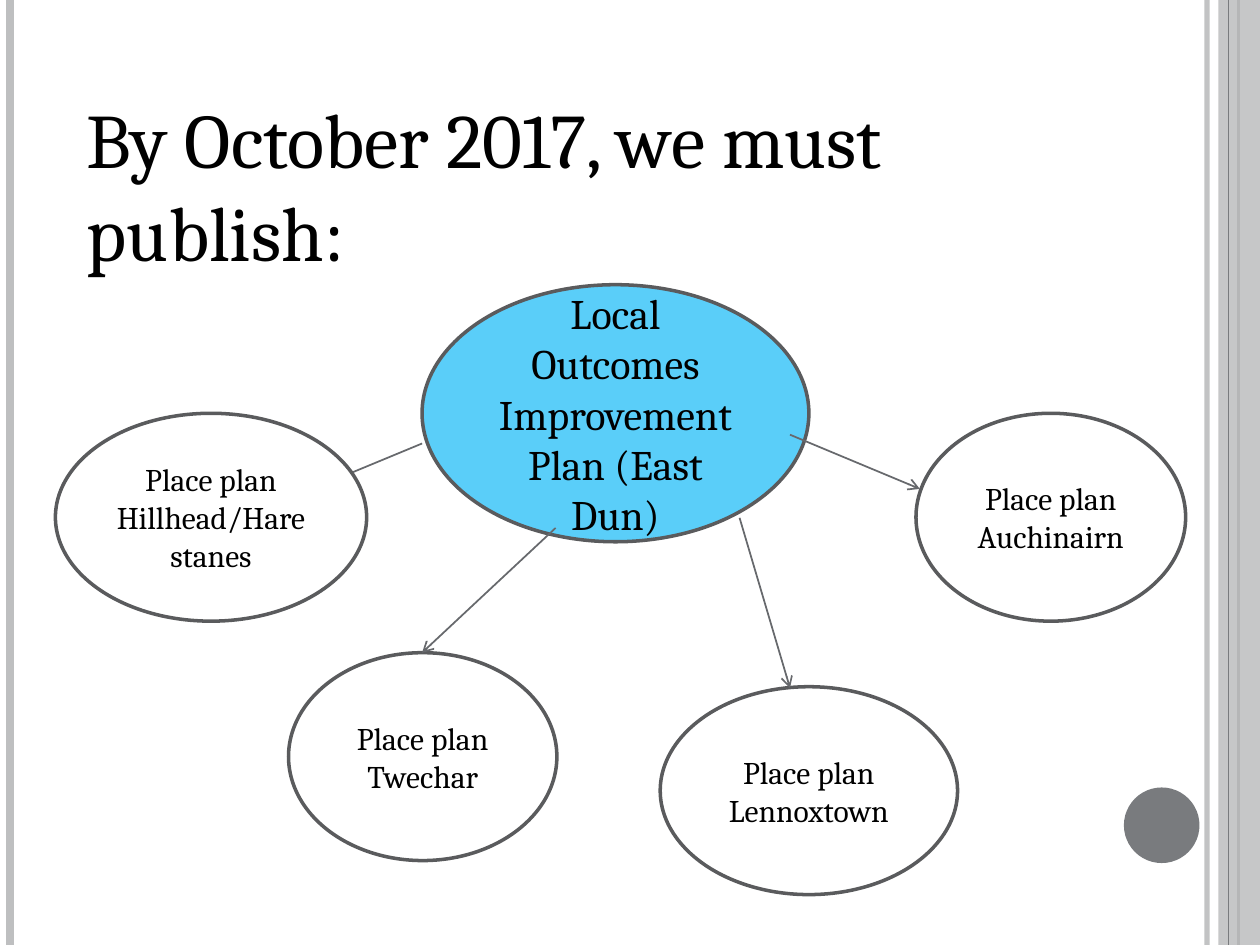
from dataclasses import dataclass

from lxml import etree
from pptx import Presentation
from pptx.dml.color import RGBColor
from pptx.enum import shapes, text
from pptx.oxml import ns
from pptx.util import Inches, Pt

FONT = "Cambria"
COLORS = {
    "text": "000000",
    "white": "FFFFFF",
    "plan": "5ACEF9",
    "outline": "5A5B5D",
    "arrow": "67696D",
    "pale": "BEBFC0",
    "grey": "797B7E",
}


@dataclass
class Bubble:
    label: str
    left: float
    top: float
    width: float
    height: float = 1.65
    fill: str = "white"
    size: int = 18


@dataclass
class Line:
    start: tuple[float, float]
    end: tuple[float, float]
    color: str = "arrow"
    width: float = 1
    arrow: bool = True
    alpha: int = 100


def rule(x: float, color: str, width: float, alpha: int = 100) -> Line:
    """Full-height vertical line at the slide's edge."""
    return Line((x, 0), (x, 7.5), color, width, False, alpha)


def rgb(name: str) -> RGBColor:
    return RGBColor.from_string(COLORS[name])


def set_alpha(sp_pr, percent: int) -> None:
    if percent < 100:
        color = next(sp_pr.iter(ns.qn("a:srgbClr")))
        etree.SubElement(color, ns.qn("a:alpha"), val=str(percent * 1000))


def write(tf, words: str, *, size: int, align, anchor) -> None:
    tf.word_wrap = True
    tf.auto_size = text.MSO_AUTO_SIZE.NONE
    tf.vertical_anchor = anchor
    p = tf.paragraphs[0]
    p.alignment = align
    p.line_spacing = 1.0
    r = p.add_run()
    r.text = words
    r.font.name = FONT
    r.font.size = Pt(size)
    r.font.color.rgb = rgb("text")


def add_solid(slide, kind, box: tuple, fill: str, alpha: int = 100):
    sp = slide.shapes.add_shape(kind, *map(Inches, box))
    sp.shadow.inherit = False
    sp.fill.solid()
    sp.fill.fore_color.rgb = rgb(fill)
    set_alpha(sp._element.spPr, alpha)
    sp.line.fill.background()
    return sp


def add_bubble(slide, b: Bubble) -> None:
    box = (b.left, b.top, b.width, b.height)
    sp = add_solid(slide, shapes.MSO_SHAPE.OVAL, box, b.fill)
    sp.line.color.rgb = rgb("outline")
    sp.line.width = Pt(2)
    write(sp.text_frame, b.label, size=b.size,
          align=text.PP_ALIGN.CENTER, anchor=text.MSO_ANCHOR.MIDDLE)


def add_line(slide, line: Line) -> None:
    cx = slide.shapes.add_connector(
        shapes.MSO_CONNECTOR.STRAIGHT, *map(Inches, line.start + line.end))
    cx.line.color.rgb = rgb(line.color)
    cx.line.width = Pt(line.width)
    sp_pr = cx._element.spPr
    set_alpha(sp_pr, line.alpha)
    if line.arrow:
        etree.SubElement(cx.line._get_or_add_ln(), ns.qn("a:tailEnd"), type="arrow")
    etree.SubElement(sp_pr, ns.qn("a:effectLst"))


def main() -> None:
    prs = Presentation()
    prs.slide_width, prs.slide_height = Inches(10), Inches(7.5)
    slide = prs.slides.add_slide(prs.slide_layouts[5])

    # Edge decoration
    for line in (rule(9.58, "pale", 3, 93), rule(0.08, "pale", 4.5),
                 rule(9.83, "grey", 1.5)):
        add_line(slide, line)
    add_solid(slide, shapes.MSO_SHAPE.RECTANGLE, (9.67, 0, 0.33, 7.5), "pale", 87)
    add_line(slide, rule(9.75, "grey", 0.75))
    add_solid(slide, shapes.MSO_SHAPE.OVAL, (8.92, 6.25, 0.6, 0.6), "grey")

    # Title
    title = slide.shapes.title
    title.left, title.top = Inches(0.59), Inches(0.68)
    title.width, title.height = Inches(6.54), Inches(1.58)
    write(title.text_frame, "By October 2017, we must publish:", size=44,
          align=text.PP_ALIGN.LEFT, anchor=text.MSO_ANCHOR.TOP)

    # Main plan and place plans
    for bubble in (
        Bubble("Local Outcomes Improvement Plan (East Dun)",
               3.35, 2.26, 3.07, 2.04, "plan", 24),
        Bubble("Place plan Twechar", 2.29, 5.18, 2.13),
        Bubble("Place plan Lennoxtown", 5.24, 5.45, 2.36),
        Bubble("Place plan Auchinairn", 7.27, 3.28, 2.14),
    ):
        add_bubble(slide, bubble)

    # Arrows from the main plan
    for line in (
        Line((4.41, 4.19), (3.35, 5.18)),
        Line((6.27, 3.45), (7.3, 3.88)),
        Line((5.87, 4.11), (6.27, 5.46)),
        Line((3.35, 3.52), (2.48, 3.88)),
    ):
        add_line(slide, line)

    # This place plan covers the tip of its arrow
    add_bubble(slide, Bubble("Place plan Hillhead/Harestanes", 0.44, 3.28, 2.47))

    prs.save("out.pptx")


if __name__ == "__main__":
    main()
